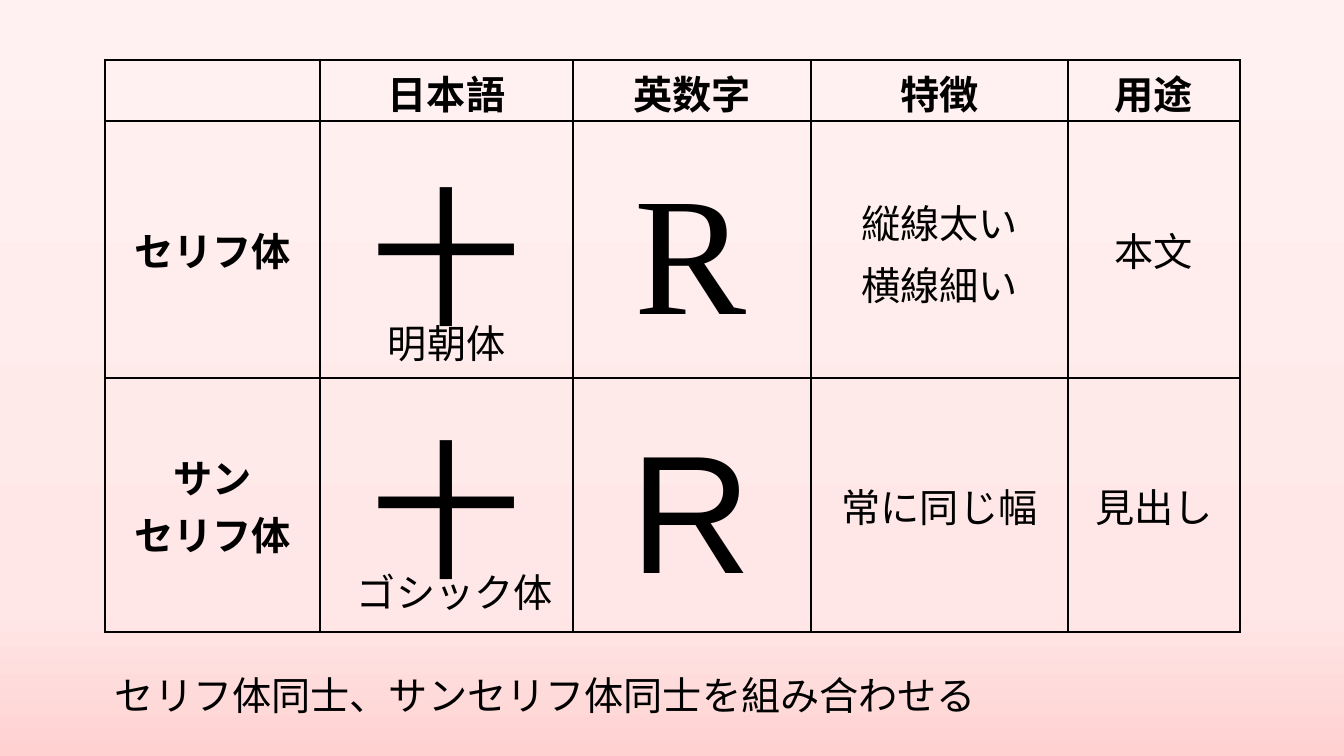
from lxml import etree
from pptx import Presentation
from pptx.dml.color import RGBColor
from pptx.enum.text import MSO_ANCHOR, MSO_AUTO_SIZE, PP_ALIGN
from pptx.oxml.ns import qn
from pptx.util import Pt

COLORS = {"ink": "000000", "top": "FFF1F1", "middle": "FFE7E7", "bottom": "FFD1D1"}
SANS, LATIN_SERIF, LATIN_SANS = "Noto Sans CJK JP", "Times New Roman", "Arial"
BODY_SIZE = 28

BACKGROUND = [(0, "top"), (80, "middle"), (100, "bottom")]
TABLE_ORIGIN = (105, 60)
COLUMNS = [215, 253, 238, 257, 172]
ROWS = [61, 257, 254]
CELLS = [
    ["", "日本語", "英数字", "特徴", "用途"],
    ["セリフ体", "", "", "縦線太い\n横線細い", "本文"],
    ["サン\nセリフ体", "", "", "常に同じ幅", "見出し"],
]
LABELS = [
    ("明朝体", (378, 305, 139, 64), BODY_SIZE, SANS, False),
    ("ゴシック体", (347, 554, 219, 64), BODY_SIZE, SANS, False),
    ("セリフ体同士、サンセリフ体同士を組み合わせる", (105, 657, 889, 64), BODY_SIZE, SANS, True),
    ("十", (361, 122, 173, 217), 108, SANS, False),
    ("R", (625, 101, 133, 233), 120, LATIN_SERIF, False),
    ("十", (361, 375, 173, 217), 108, SANS, False),
    ("R", (621, 360, 143, 232), 120, LATIN_SANS, False),
]


def px(n):
    return round(n * 12192000 / 1344)


def add_color(parent, name):
    fill = etree.SubElement(parent, qn("a:srgbClr"))
    fill.set("val", COLORS[name])


def style_paragraph(p, size, font, bold=False, spacing=None):
    if spacing:
        p.line_spacing = spacing
    for r in p.runs:
        r.font.size = Pt(size)
        r.font.name = font
        r.font.bold = bold
        r.font.color.rgb = RGBColor.from_string(COLORS["ink"])
        r.font.language_id = None
        ea = etree.SubElement(r.font._element, qn("a:ea"))
        ea.set("typeface", font)


def paint_background(slide):
    fill = slide.background.fill
    fill.gradient()
    fill.gradient_angle = 270
    stops = slide.element.find(".//" + qn("a:gsLst"))
    for old in list(stops):
        stops.remove(old)
    for percent, name in BACKGROUND:
        stop = etree.SubElement(stops, qn("a:gs"))
        stop.set("pos", str(percent * 1000))
        add_color(stop, name)


def add_borders(cell):
    props = cell._tc.get_or_add_tcPr()
    for i, side in enumerate(("lnL", "lnR", "lnT", "lnB")):
        line = etree.Element(qn("a:" + side))
        line.set("w", str(Pt(1)))
        add_color(etree.SubElement(line, qn("a:solidFill")), "ink")
        props.insert(i, line)


def add_comparison(slide):
    frame = slide.shapes.add_table(
        len(ROWS), len(COLUMNS), *map(px, (*TABLE_ORIGIN, sum(COLUMNS), sum(ROWS))))
    table = frame.table
    table.first_row = table.horz_banding = False
    for column, width in zip(table.columns, COLUMNS):
        column.width = px(width)
    for row, height in zip(table.rows, ROWS):
        row.height = px(height)
    for i, texts in enumerate(CELLS):
        for j, text in enumerate(texts):
            cell = table.cell(i, j)
            cell.fill.background()
            add_borders(cell)
            cell.vertical_anchor = MSO_ANCHOR.MIDDLE
            if i == 0:
                cell.margin_top, cell.margin_bottom = px(4), 0
            cell.text_frame.text = text
            spacing = 1.1 if j == 3 and "\n" in text else None
            for p in cell.text_frame.paragraphs:
                p.alignment = PP_ALIGN.CENTER
                style_paragraph(p, BODY_SIZE, SANS, i == 0 or j == 0, spacing)


def add_label(slide, text, box, size, font, wrap):
    tf = slide.shapes.add_textbox(*map(px, box)).text_frame
    tf.word_wrap = wrap
    tf.auto_size = MSO_AUTO_SIZE.SHAPE_TO_FIT_TEXT
    tf.text = text
    style_paragraph(tf.paragraphs[0], size, font, spacing=1.2)


def main():
    prs = Presentation()
    prs.slide_width, prs.slide_height = px(1344), px(756)
    slide = prs.slides.add_slide(prs.slide_layouts[6])
    paint_background(slide)
    add_comparison(slide)
    for label in LABELS:
        add_label(slide, *label)
    prs.save("out.pptx")


if __name__ == "__main__":
    main()
